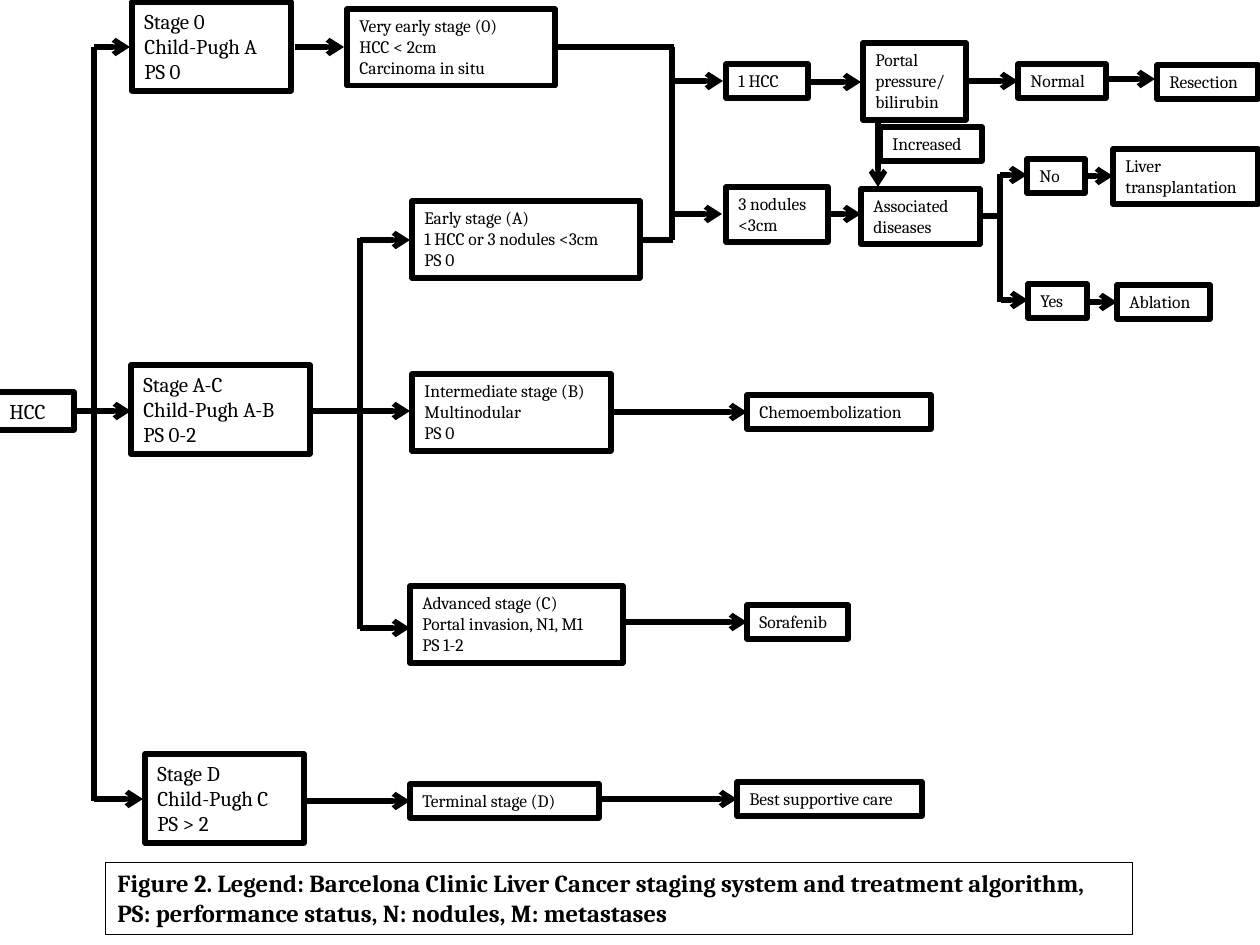
from pptx import Presentation
from pptx.dml.color import RGBColor
from pptx.enum.shapes import MSO_CONNECTOR
from pptx.enum.text import MSO_ANCHOR, MSO_AUTO_SIZE
from pptx.oxml.ns import qn
from pptx.util import Pt
from lxml import etree

STRAIGHT = MSO_CONNECTOR.STRAIGHT
TOP = MSO_ANCHOR.TOP
GROW = MSO_AUTO_SIZE.SHAPE_TO_FIT_TEXT
SCALE = 914400 / 126
INK = "000000"
THICK, THIN = 3, 0.25

# Text formats
STAGE = {"name": "Cambria", "size": Pt(12)}
NODE = {"name": "Cambria", "size": Pt(10)}
LEGEND = {"name": "Cambria", "size": Pt(14), "bold": True}

# Boxes: left, top, width, height, text
STAGES = [
    (-3, 392, 77, 38, "HCC"),
    (132, 2, 159, 89, "Stage 0\nChild-Pugh A\nPS 0"),
    (131, 365, 179, 89, "Stage A-C\nChild-Pugh A-B\nPS 0-2"),
    (145, 754, 159, 89, "Stage D\nChild-Pugh C\nPS > 2"),
]
NODES = [
    (347, 9, 208, 77, "Very early stage (0)\nHCC < 2cm\nCarcinoma in situ"),
    (412, 201, 228, 77, "Early stage (A)\n1 HCC or 3 nodules <3cm\nPS 0"),
    (412, 374, 199, 77, "Intermediate stage (B)\nMultinodular\nPS 0"),
    (410, 586, 213, 77, "Advanced stage (C)\nPortal invasion, N1, M1\nPS 1-2"),
    (410, 784, 189, 34, "Terminal stage (D)"),
    (726, 64, 82, 34, "1 HCC"),
    (726, 187, 102, 55, "3 nodules <3cm"),
    (863, 43, 103, 77, "Portal pressure/\nbilirubin"),
    (861, 189, 119, 55, "Associated diseases"),
    (880, 127, 102, 34, "Increased"),
    (1018, 64, 88, 34, "Normal"),
    (1157, 65, 101, 34, "Resection"),
    (1027, 159, 58, 34, "No"),
    (1028, 284, 59, 34, "Yes"),
    (1113, 149, 145, 55, "Liver transplantation"),
    (1117, 285, 93, 34, "Ablation"),
    (747, 395, 184, 34, "Chemoembolization"),
    (747, 605, 101, 34, "Sorafenib"),
    (737, 782, 185, 34, "Best supportive care"),
]
CAPTION = (105, 862, 1027, 72,
           "Figure 2. Legend: Barcelona Clinic Liver Cancer staging system "
           "and treatment algorithm,\n"
           "PS: performance status, N: nodules, M: metastases")

# Plain lines: from x, y to x, y
LINES = [
    (94, 47, 94, 801),
    (360, 238, 360, 629),
    (555, 47, 674, 47),
    (672, 240, 672, 47),
    (639, 240, 673, 240),
    (1000, 174, 1000, 302),
    (1000, 216, 980, 216),
]
# Level arrows: from x, to x, y
ARROWS = [
    (74, 131, 411), (94, 130, 47), (94, 143, 799),
    (295, 344, 47), (311, 410, 411), (360, 410, 240),
    (360, 410, 628), (305, 410, 801),
    (674, 723, 81), (672, 722, 214), (828, 861, 214),
    (811, 861, 82), (969, 1018, 81), (1106, 1155, 79),
    (1000, 1027, 175), (1001, 1028, 300),
    (1084, 1113, 176), (1087, 1117, 302),
    (609, 747, 412), (623, 747, 622), (599, 737, 799),
]
INCREASE = (878, 119, 878, 187)


def px(num):
    return round(num * SCALE)


def color(code):
    return RGBColor.from_string(code)


def stroke(line, width):
    line.color.rgb = color(INK)
    line.width = Pt(width)


def apply(target, style):
    for key, value in style.items():
        setattr(target, key, value)


def add_box(slide, item, style, width=THICK):
    *place, text = item
    box = slide.shapes.add_textbox(*map(px, place))
    stroke(box.line, width)
    frame = box.text_frame
    apply(frame, {"word_wrap": True, "auto_size": GROW,
                  "vertical_anchor": TOP})
    frame.text = text
    for para in frame.paragraphs:
        apply(para.font, style)
        para.font.color.rgb = color(INK)


def add_line(slide, ends, arrow=False):
    link = slide.shapes.add_connector(STRAIGHT, *map(px, ends))
    stroke(link.line, THICK)
    if arrow:
        tail = etree.SubElement(link.line._get_or_add_ln(), qn("a:tailEnd"))
        tail.set("type", "arrow")
    etree.SubElement(link._element.spPr, qn("a:effectLst"))


def main():
    deck = Presentation()
    deck.slide_width, deck.slide_height = px(1260), px(945)
    slide = deck.slides.add_slide(deck.slide_layouts[6])
    for ends in LINES:
        add_line(slide, ends)
    for start, end, y in ARROWS:
        add_line(slide, (start, y, end, y), arrow=True)
    add_line(slide, INCREASE, arrow=True)
    for item in STAGES:
        add_box(slide, item, STAGE)
    for item in NODES:
        add_box(slide, item, NODE)
    add_box(slide, CAPTION, LEGEND, THIN)
    deck.save("out.pptx")


if __name__ == "__main__":
    main()
